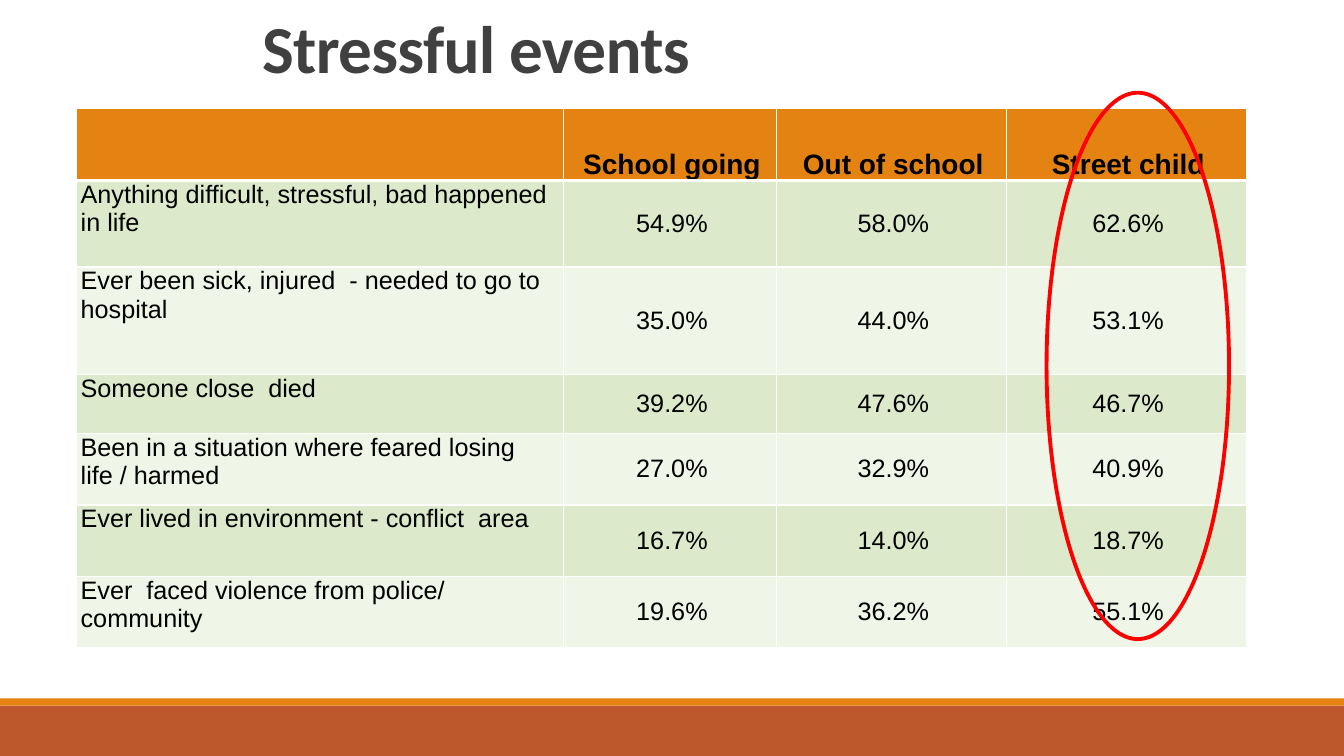
from dataclasses import dataclass
from typing import NamedTuple

import pptx
import pptx.dml.color
import pptx.enum.shapes
import pptx.enum.text
import pptx.oxml
import pptx.oxml.ns
import pptx.util

EMU_PER_PX = 9144

Anchor = pptx.enum.text.MSO_ANCHOR
Align = pptx.enum.text.PP_ALIGN
Preset = pptx.enum.shapes.MSO_SHAPE


@dataclass(frozen=True)
class Theme:
    title_font: str = "Calibri"
    table_font: str = "Arial"
    title_size: int = 48
    header_size: int = 20
    body_size: int = 18
    title_color: str = "404040"
    text_color: str = "000000"
    orange: str = "E48312"
    rust: str = "BD582C"
    band_dark: str = "DCEACB"
    band_light: str = "EFF5E7"
    grid: str = "FFFFFF"
    highlight: str = "FF0000"


class Box(NamedTuple):
    left: int
    top: int
    width: int
    height: int


class FooterBar(NamedTuple):
    box: Box
    color: str


class EventRow(NamedTuple):
    height: int
    event: str
    shares: tuple[str, str, str]


class CellStyle(NamedTuple):
    fill: str
    size: int
    bold: bool
    align: Align
    anchor: Anchor
    top_border: float
    bottom_border: float


THEME = Theme()
FOOTER_BARS = (
    FooterBar(Box(0, 700, 1333, 50), THEME.rust),
    FooterBar(Box(0, 693, 1333, 7), THEME.orange),
)
TITLE_BOX = Box(250, -33, 768, 125)
TABLE_BOX = Box(76, 108, 1160, 534)
HIGHLIGHT_BOX = Box(1038, 92, 181, 542)
COLUMN_WIDTHS = (483, 211, 228, 238)
HEADER_HEIGHT = 71
HEADERS = ("", "School going", "Out of school", "Street child")
EVENTS = (
    EventRow(86, "Anything difficult, stressful, bad happened in life", ("54.9%", "58.0%", "62.6%")),
    EventRow(107, "Ever been sick, injured  - needed to go to hospital", ("35.0%", "44.0%", "53.1%")),
    EventRow(58, "Someone close  died", ("39.2%", "47.6%", "46.7%")),
    EventRow(71, "Been in a situation where feared losing life / harmed", ("27.0%", "32.9%", "40.9%")),
    EventRow(71, "Ever lived in environment - conflict  area", ("16.7%", "14.0%", "18.7%")),
    EventRow(71, "Ever  faced violence from police/ community", ("19.6%", "36.2%", "55.1%")),
)


def px(length: int) -> pptx.util.Emu:
    return pptx.util.Emu(length * EMU_PER_PX)


def rgb(color: str) -> pptx.dml.color.RGBColor:
    return pptx.dml.color.RGBColor.from_string(color)


def format_paragraph(para, font: str, size: int, color: str, bold: bool, align: Align) -> None:
    para.alignment = align
    para.font.name = font
    para.font.size = pptx.util.Pt(size)
    para.font.bold = bold
    para.font.color.rgb = rgb(color)


def add_preset(page, preset: Preset, box: Box):
    shape = page.shapes.add_shape(preset, *map(px, box))
    shape.shadow.inherit = False
    return shape


def add_footer_bar(page, bar: FooterBar) -> None:
    shape = add_preset(page, Preset.RECTANGLE, bar.box)
    shape.fill.solid()
    shape.fill.fore_color.rgb = rgb(bar.color)
    shape.line.fill.background()


def add_highlight(page) -> None:
    oval = add_preset(page, Preset.OVAL, HIGHLIGHT_BOX)
    oval.fill.background()
    oval.line.color.rgb = rgb(THEME.highlight)
    oval.line.width = pptx.util.Pt(2.75)


def set_title(page, text: str) -> None:
    title = page.shapes.title
    title.left, title.top, title.width, title.height = map(px, TITLE_BOX)
    frame = title.text_frame
    frame.text = text
    frame.word_wrap = True
    frame.auto_size = pptx.enum.text.MSO_AUTO_SIZE.NONE
    frame.vertical_anchor = Anchor.BOTTOM
    para = frame.paragraphs[0]
    para.line_spacing = 0.85
    format_paragraph(para, THEME.title_font, THEME.title_size, THEME.title_color, True, Align.LEFT)
    para._p.get_or_add_pPr().get_or_add_defRPr().set("spc", "-50")


def add_border(cell, side: str, width: float) -> None:
    namespace = pptx.oxml.ns.nsdecls("a")
    border = pptx.oxml.parse_xml(
        f'<a:ln{side} {namespace} w="{pptx.util.Pt(width)}"><a:solidFill>'
        f'<a:srgbClr val="{THEME.grid}"/></a:solidFill></a:ln{side}>'
    )
    cell._tc.get_or_add_tcPr().append(border)


def fill_cell(cell, text: str, style: CellStyle) -> None:
    cell.margin_left = cell.margin_right = cell.margin_top = cell.margin_bottom = 0
    cell.vertical_anchor = style.anchor
    borders = (("L", 1), ("R", 1), ("T", style.top_border), ("B", style.bottom_border))
    for side, width in borders:
        add_border(cell, side, width)
    cell.fill.solid()
    cell.fill.fore_color.rgb = rgb(style.fill)
    cell.text = text
    para = cell.text_frame.paragraphs[0]
    para._p.get_or_add_pPr().set("marL", str(px(4)))
    format_paragraph(para, THEME.table_font, style.size, THEME.text_color, style.bold, style.align)


def add_event_table(page) -> None:
    frame = page.shapes.add_table(len(EVENTS) + 1, len(COLUMN_WIDTHS), *map(px, TABLE_BOX))
    table = frame.table
    table.first_row = False
    table.horz_banding = False
    for column, width in zip(table.columns, COLUMN_WIDTHS):
        column.width = px(width)
    table.rows[0].height = px(HEADER_HEIGHT)
    header = CellStyle(THEME.orange, THEME.header_size, True, Align.CENTER, Anchor.BOTTOM, 1, 3)
    for column, text in enumerate(HEADERS):
        fill_cell(table.cell(0, column), text, header)
    for row, entry in enumerate(EVENTS, start=1):
        table.rows[row].height = px(entry.height)
        fill = THEME.band_dark if row % 2 else THEME.band_light
        top_border = 3 if row == 1 else 1
        label = CellStyle(fill, THEME.body_size, False, Align.LEFT, Anchor.TOP, top_border, 1)
        share = label._replace(align=Align.CENTER, anchor=Anchor.MIDDLE)
        fill_cell(table.cell(row, 0), entry.event, label)
        for column, text in enumerate(entry.shares, start=1):
            fill_cell(table.cell(row, column), text, share)


def main() -> None:
    deck = pptx.Presentation()
    deck.slide_width, deck.slide_height = px(1333), px(750)
    page = deck.slides.add_slide(deck.slide_layouts[5])
    for bar in FOOTER_BARS:
        add_footer_bar(page, bar)
    set_title(page, "Stressful events")
    add_event_table(page)
    add_highlight(page)
    deck.save("out.pptx")


if __name__ == "__main__":
    main()
